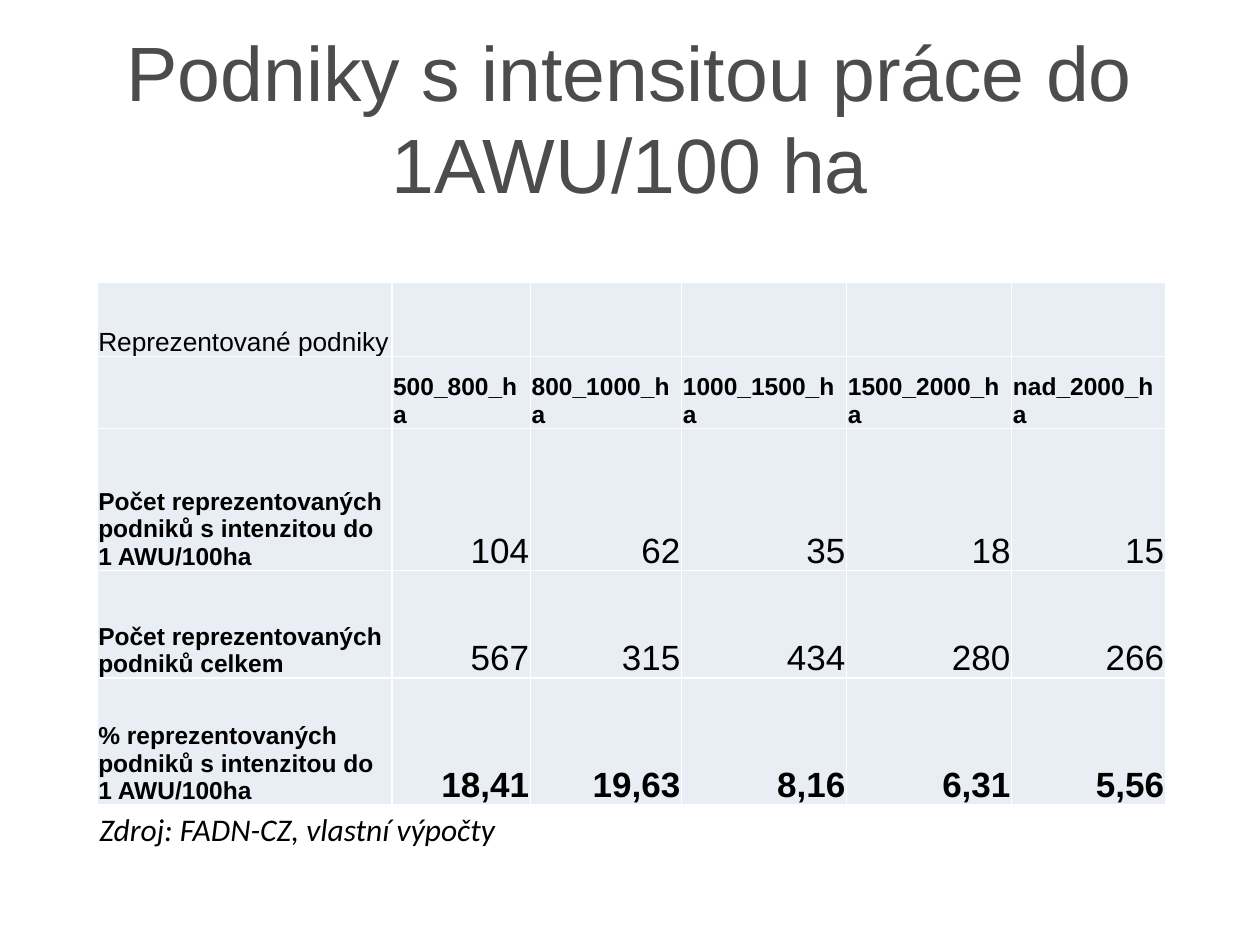
from lxml import etree
from pptx import Presentation
from pptx.dml.color import RGBColor
from pptx.enum.text import MSO_ANCHOR, PP_ALIGN
from pptx.oxml.ns import qn
from pptx.util import Inches, Pt

LEFT, CENTER, RIGHT = PP_ALIGN.LEFT, PP_ALIGN.CENTER, PP_ALIGN.RIGHT
MIDDLE, BOTTOM = MSO_ANCHOR.MIDDLE, MSO_ANCHOR.BOTTOM

WIDTH, HEIGHT = 10, 7.5
CELL_FILL, BORDER, BLACK, GREY = "E9EDF4", "FFFFFF", "000000", "4C4C4C"

# Boxes: left, top, width, height in inches
TITLE_BOX = (0.05 * WIDTH, 0.04 * HEIGHT, 0.9 * WIDTH, 1.25)
TABLE_BOX = (0.77, 2.24, 8.49, 4.14)
SOURCE_BOX = (0.69, 6.38, 3.43, 0.4)

COLUMNS = [2.34, 1.1, 1.2, 1.31, 1.31, 1.22]
ROWS = [0.59, 0.57, 1.13, 0.85, 1.01]

# Text formats
TITLE = {"size": Pt(44), "name": "Arial"}
SOURCE = {"size": Pt(18), "name": "Calibri", "italic": True}
CAPTION = {"size": Pt(15), "name": "Arial", "bold": False}
LABEL = {"size": Pt(14), "name": "Arial", "bold": True}
VALUE = {"size": Pt(20), "name": "Arial", "bold": False}
SHARE = {"size": Pt(20), "name": "Arial", "bold": True}

# Each row: format of its values, then its cells
TABLE = [
    (CAPTION, ["Reprezentované podniky", "", "", "", "", ""]),
    (LABEL, ["", "500_800_ha", "800_1000_ha", "1000_1500_ha",
             "1500_2000_ha", "nad_2000_ha"]),
    (VALUE, ["Počet reprezentovaných podniků s intenzitou do 1 AWU/100ha",
             "104", "62", "35", "18", "15"]),
    (VALUE, ["Počet reprezentovaných podniků celkem",
             "567", "315", "434", "280", "266"]),
    (SHARE, ["% reprezentovaných podniků s intenzitou do 1 AWU/100ha",
             "18,41", "19,63", "8,16", "6,31", "5,56"]),
]


def color(value):
    return RGBColor.from_string(value)


def write(frame, text, style, ink, align=LEFT):
    para = frame.paragraphs[0]
    para.alignment = align
    span = para.add_run()
    span.text = text
    for key, value in style.items():
        setattr(span.font, key, value)
    span.font.color.rgb = color(ink)


def add_text(page, box, text, style, ink, align=LEFT, wrap=True):
    frame = page.shapes.add_textbox(*map(Inches, box)).text_frame
    frame.word_wrap = wrap
    frame.vertical_anchor = MIDDLE
    write(frame, text, style, ink, align)


def add_borders(cell):
    properties = cell._tc.get_or_add_tcPr()
    for index, side in enumerate(("a:lnL", "a:lnR", "a:lnT", "a:lnB")):
        line = etree.Element(qn(side), w=str(Pt(1)))
        fill = etree.SubElement(line, qn("a:solidFill"))
        etree.SubElement(fill, qn("a:srgbClr"), val=BORDER)
        properties.insert(index, line)


def format_cell(cell):
    cell.fill.solid()
    cell.fill.fore_color.rgb = color(CELL_FILL)
    cell.vertical_anchor = BOTTOM
    cell.margin_left = cell.margin_right = cell.margin_top = Inches(0.01)
    cell.margin_bottom = 0
    add_borders(cell)


def add_farm_table(page, box):
    table = page.shapes.add_table(len(ROWS), len(COLUMNS),
                                  *map(Inches, box)).table
    table.first_row = table.horz_banding = False
    for column, width in zip(table.columns, COLUMNS):
        column.width = Inches(width)
    for row, height, (style, texts) in zip(table.rows, ROWS, TABLE):
        row.height = Inches(height)
        numeric = style in (VALUE, SHARE)
        for index, (cell, text) in enumerate(zip(row.cells, texts)):
            format_cell(cell)
            if not text:
                continue
            if numeric and index == 0:
                write(cell.text_frame, text, LABEL, BLACK)
            else:
                write(cell.text_frame, text, style, BLACK,
                      RIGHT if numeric else LEFT)


def main():
    deck = Presentation()
    deck.slide_width, deck.slide_height = Inches(WIDTH), Inches(HEIGHT)
    page = deck.slides.add_slide(deck.slide_layouts[6])
    # Title, table and source line
    add_text(page, TITLE_BOX, "Podniky s intensitou práce do 1AWU/100 ha",
             TITLE, GREY, CENTER)
    add_farm_table(page, TABLE_BOX)
    add_text(page, SOURCE_BOX, "Zdroj: FADN-CZ, vlastní výpočty",
             SOURCE, BLACK, wrap=False)
    deck.save("out.pptx")


if __name__ == "__main__":
    main()
